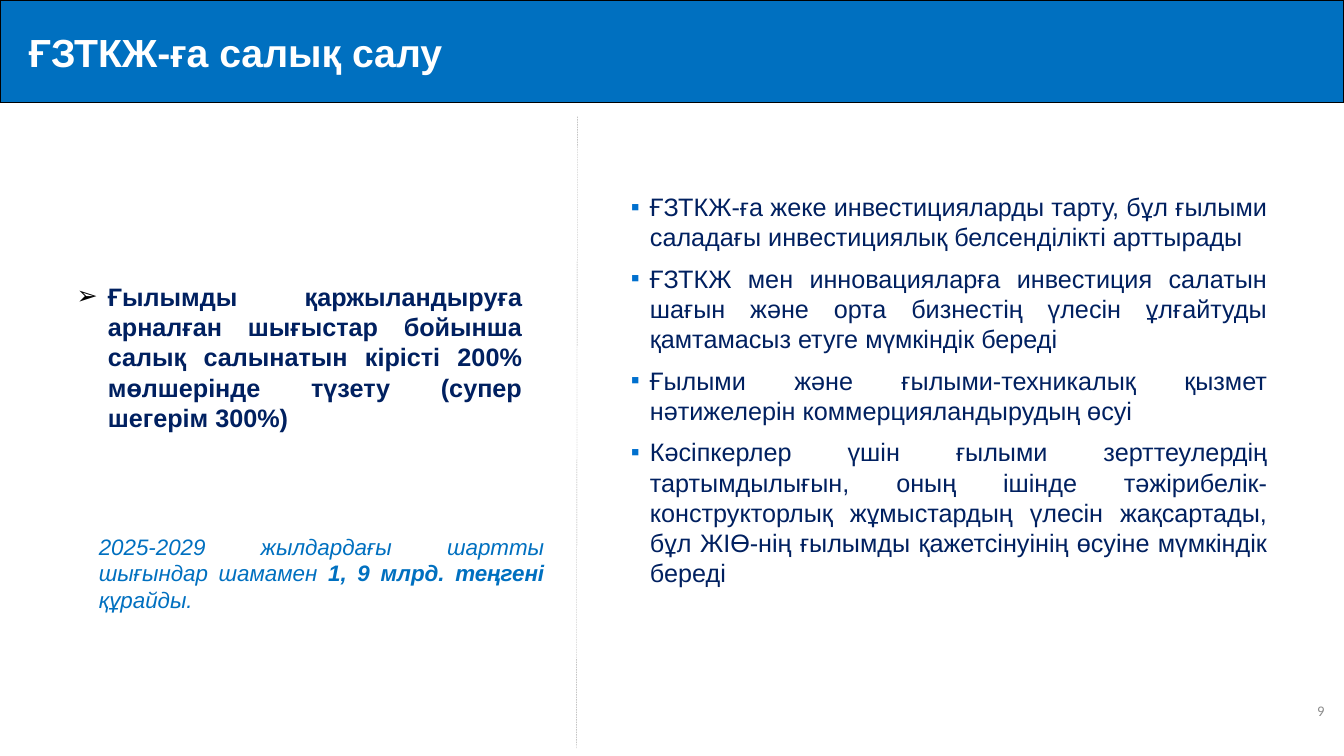
from lxml.etree import SubElement
from pptx import Presentation
from pptx.dml.color import RGBColor
from pptx.enum.dml import MSO_LINE
from pptx.enum.shapes import MSO_CONNECTOR, MSO_SHAPE
from pptx.enum.text import MSO_ANCHOR, PP_ALIGN
from pptx.oxml.ns import qn
from pptx.util import Cm, Pt

COLORS = {
    "band": "0070C0",
    "marker": "0070CE",
    "body": "002060",
    "muted": "8C8C8C",
    "divider": "A6A6A6",
    "black": "000000",
    "white": "FFFFFF",
}

BENEFITS = [
    "ҒЗТКЖ-ға жеке инвестицияларды тарту, бұл ғылыми саладағы инвестициялық "
    "белсенділікті арттырады",
    "ҒЗТКЖ мен инновацияларға инвестиция салатын шағын және орта бизнестің "
    "үлесін ұлғайтуды қамтамасыз етуге мүмкіндік береді",
    "Ғылыми және ғылыми-техникалық қызмет нәтижелерін коммерцияландырудың өсуі",
    "Кәсіпкерлер үшін ғылыми зерттеулердің тартымдылығын, оның ішінде "
    "тәжірибелік-конструкторлық жұмыстардың үлесін жақсартады, бұл ЖІӨ-нің "
    "ғылымды қажетсінуінің өсуіне мүмкіндік береді",
]
TAX_MEASURE = (
    "Ғылымды қаржыландыруға арналған шығыстар бойынша салық салынатын кірісті "
    "200% мөлшерінде түзету (супер шегерім 300%)"
)
COST_NOTE = [
    ("2025-2029 жылдардағы шартты шығындар шамамен ", False),
    ("1, 9 млрд. теңгені ", True),
    ("құрайды.", False),
]


def rgb(name):
    return RGBColor.from_string(COLORS[name])


def style_run(run, size, color, bold=False, italic=False, face="Arial"):
    font = run.font
    font.name, font.size, font.bold, font.italic = face, Pt(size), bold, italic
    font.color.rgb = rgb(color)


def add_title_band(slide, text, width):
    band = slide.shapes.add_shape(MSO_SHAPE.RECTANGLE, 0, 0, width, Cm(2.59))
    band.shadow.inherit = False
    band.fill.solid()
    band.fill.fore_color.rgb = rgb("band")
    band.line.color.rgb = rgb("black")
    band.line.width = Pt(1)
    frame = band.text_frame
    frame.text = text
    frame.vertical_anchor = MSO_ANCHOR.MIDDLE
    title = frame.paragraphs[0]
    title.alignment = PP_ALIGN.LEFT
    title._p.get_or_add_pPr().set("marL", str(Cm(0.48)))
    style_run(title.runs[0], 28, "white", bold=True)


def add_text_frame(slide, left, top, width, height):
    frame = slide.shapes.add_textbox(Cm(left), Cm(top), Cm(width), Cm(height)).text_frame
    frame.word_wrap = True
    return frame


def set_bullet(paragraph, char, color, indent):
    properties = paragraph._p.get_or_add_pPr()
    properties.set("marL", str(Cm(indent)))
    properties.set("indent", str(-Cm(indent)))
    bullet_color = SubElement(properties, qn("a:buClr"))
    SubElement(bullet_color, qn("a:srgbClr")).set("val", COLORS[color])
    SubElement(properties, qn("a:buFont")).set("typeface", "Arial")
    SubElement(properties, qn("a:buChar")).set("char", char)


def add_bullet_list(slide, box, items, char, marker, indent, bold=False):
    frame = add_text_frame(slide, *box)
    frame.text = "\n".join(items)
    for item in frame.paragraphs:
        set_bullet(item, char, marker, indent)
        item.alignment = PP_ALIGN.JUSTIFY
        item.space_after = Pt(8)
        style_run(item.runs[0], 18, "body", bold=bold)


def add_cost_note(slide):
    note = add_text_frame(slide, 2.24, 13.3, 11.73, 2.27).paragraphs[0]
    note.alignment = PP_ALIGN.JUSTIFY
    for text, bold in COST_NOTE:
        run = note.add_run()
        run.text = text
        style_run(run, 16, "band", bold=bold, italic=True)


def add_divider(slide):
    divider = slide.shapes.add_connector(
        MSO_CONNECTOR.STRAIGHT, Cm(14.53), Cm(18.85), Cm(14.55), Cm(2.92))
    divider.line.color.rgb = rgb("divider")
    divider.line.width = Pt(0.25)
    divider.line.dash_style = MSO_LINE.DASH
    SubElement(divider._element.spPr, qn("a:effectLst"))


def add_page_number(slide, number):
    frame = add_text_frame(slide, 30.45, 16.99, 3.18, 1.85)
    frame.text = number
    frame.vertical_anchor = MSO_ANCHOR.MIDDLE
    frame.paragraphs[0].alignment = PP_ALIGN.RIGHT
    style_run(frame.paragraphs[0].runs[0], 10.5, "muted", face="Calibri")


def main():
    prs = Presentation()
    prs.slide_width, prs.slide_height = Cm(33.87), Cm(19.05)
    slide = prs.slides.add_slide(prs.slide_layouts[6])

    # Heading and page number
    add_title_band(slide, "ҒЗТКЖ-ға салық салу", prs.slide_width)
    add_page_number(slide, "9")

    # Tax measure and its cost on the left
    add_bullet_list(slide, (1.68, 6.96, 11.73, 4.11), [TAX_MEASURE],
                    "➢", "black", 0.79, bold=True)
    add_cost_note(slide)

    # Expected benefits on the right
    add_divider(slide)
    add_bullet_list(slide, (15.65, 4.7, 16.54, 11.3), BENEFITS, "▪", "marker", 0.48)

    prs.save("out.pptx")


if __name__ == "__main__":
    main()
